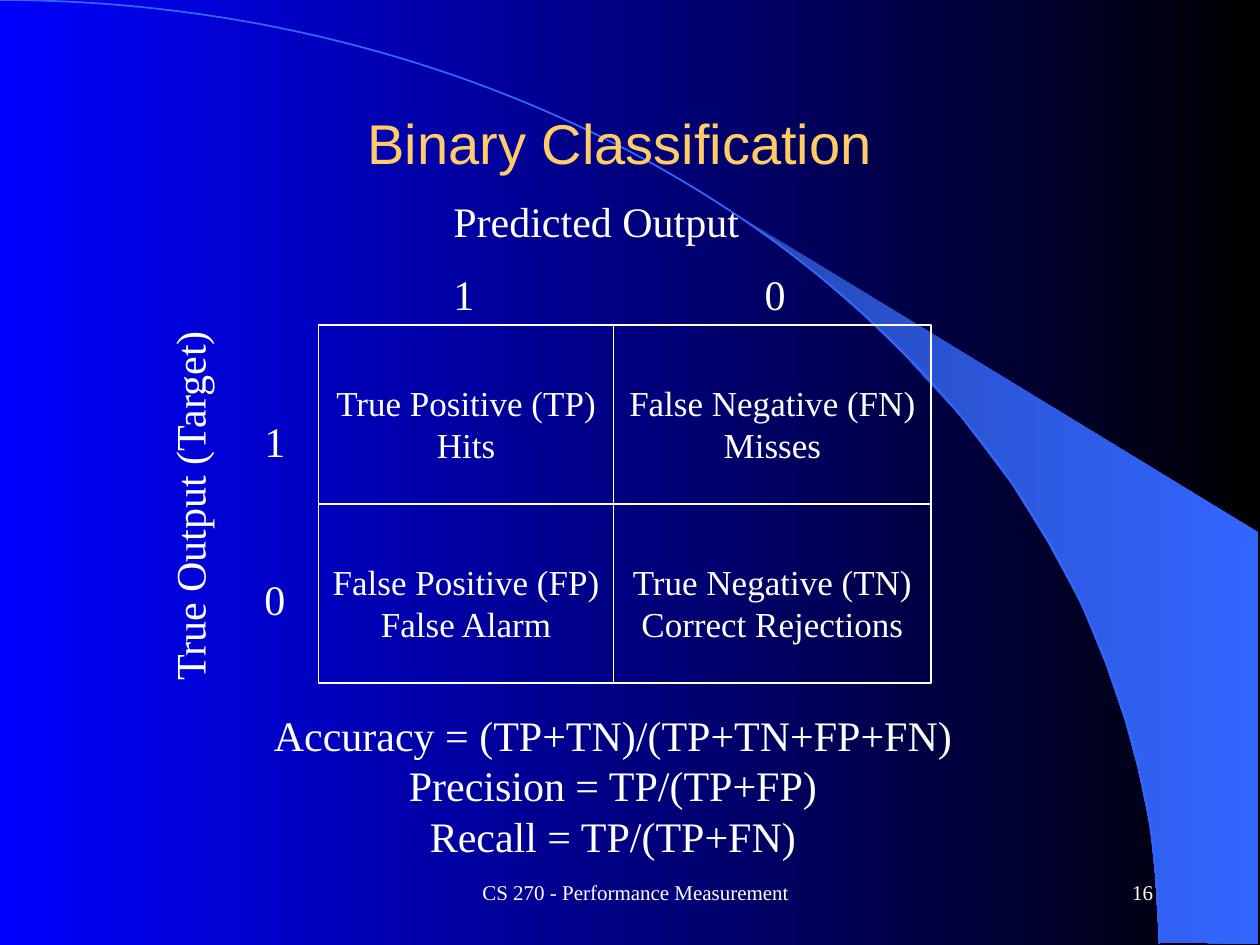
import math

import pptx
import pptx.dml.color
import pptx.enum.shapes
import pptx.enum.text
import pptx.oxml.ns
import pptx.util
from pptx.util import Inches

RGBColor = pptx.dml.color.RGBColor
Align = pptx.enum.text.PP_ALIGN
Anchor = pptx.enum.text.MSO_ANCHOR

WHITE = RGBColor(0xFF, 0xFF, 0xFF)
GOLD = RGBColor(0xFF, 0xCC, 0x66)
BLUE = RGBColor(0x00, 0x00, 0xFF)
BLACK = RGBColor(0x00, 0x00, 0x00)
DEEP_BLUE = RGBColor(0x24, 0x49, 0xB6)
BRIGHT_BLUE = RGBColor(0x33, 0x66, 0xFF)

ARC_WIDTH, ARC_HEIGHT, ARC_STEPS = 9.2, 7.49, 90
BEAM = [
    (9.2, 7.48), (9.99, 7.49), (9.99, 4.23), (5.89, 1.73), (6.24, 1.99),
    (6.53, 2.22), (6.85, 2.5), (7.16, 2.8), (7.62, 3.3), (8.03, 3.84),
    (8.32, 4.31), (8.58, 4.79), (8.78, 5.28), (8.93, 5.72), (9.03, 6.09),
    (9.13, 6.56), (9.17, 6.96),
]

COLUMNS = [(2.53, 2.34), (4.87, 2.52)]
ROW_TOP, ROW_HEIGHT = 2.58, 1.42
OUTCOMES = [
    ["True Positive (TP)\nHits", "False Negative (FN)\nMisses"],
    ["False Positive (FP)\nFalse Alarm", "True Negative (TN)\nCorrect Rejections"],
]
CLASS_LABELS = [
    ("1", 3.5, 2.08), ("0", 5.97, 2.08),
    ("1", 2, 3.25), ("0", 2, 4.5),
]
MEASURES = "\n".join([
    "Accuracy = (TP+TN)/(TP+TN+FP+FN)",
    "Precision = TP/(TP+FP)",
    "Recall = TP/(TP+FN)",
])


def fill_gradient(fill, start, end):
    """Fill from left to right with two colours."""
    fill.gradient()
    fill.gradient_angle = 0
    for stop, color in zip(fill.gradient_stops, (start, end)):
        stop.color.rgb = color


def add_outline(page, points, close):
    """Add a freeform through points given in inches."""
    corners = [(Inches(x), Inches(y)) for x, y in points]
    builder = page.shapes.build_freeform(*corners[0])
    builder.add_line_segments(corners[1:], close=close)
    outline = builder.convert_to_shape()
    outline.shadow.inherit = False
    return outline


def add_backdrop(page):
    """Draw the gradient background with its beam and arc."""
    fill_gradient(page.background.fill, BLUE, BLACK)
    beam = add_outline(page, BEAM, True)
    fill_gradient(beam.fill, DEEP_BLUE, BRIGHT_BLUE)
    beam.line.fill.background()
    angles = [math.pi / 2 * step / ARC_STEPS for step in range(ARC_STEPS + 1)]
    curve = [(ARC_WIDTH * math.sin(angle), ARC_HEIGHT * (1 - math.cos(angle)))
             for angle in angles]
    arc = add_outline(page, curve, False)
    arc.fill.background()
    arc.line.color.rgb = BRIGHT_BLUE
    arc.line.width = pptx.util.Pt(1)


def add_text(page, text, left, top, width, height, size=24, align=Align.LEFT,
             anchor=Anchor.TOP, font="Times New Roman", color=WHITE, wrap=False):
    """Add a text box with one paragraph for each line of text."""
    box = page.shapes.add_textbox(
        Inches(left), Inches(top), Inches(width), Inches(height))
    frame = box.text_frame
    frame.word_wrap = wrap
    frame.vertical_anchor = anchor
    frame.text = text
    for para in frame.paragraphs:
        para.alignment = align
        for span in para.runs:
            span.font.size = pptx.util.Pt(size)
            span.font.name = font
            span.font.color.rgb = color
    return box


def add_cell(page, left, top, width):
    """Add one outlined cell of the matrix."""
    cell = page.shapes.add_shape(
        pptx.enum.shapes.MSO_SHAPE.RECTANGLE,
        Inches(left), Inches(top), Inches(width), Inches(ROW_HEIGHT))
    cell.shadow.inherit = False
    cell.fill.background()
    cell.line.color.rgb = WHITE
    cell.line.width = pptx.util.Pt(0.75)


def add_matrix(page):
    """Add the four outcomes with their class labels."""
    for label, left, top in CLASS_LABELS:
        add_text(page, label, left, top, 0.37, 0.5, wrap=True)
    for row, outcomes in enumerate(OUTCOMES):
        top = ROW_TOP + row * ROW_HEIGHT
        for (left, width), outcome in zip(COLUMNS, outcomes):
            add_text(page, outcome, left, top + 0.4, width, 0.77,
                     size=20, align=Align.CENTER)
            add_cell(page, left, top, width)


def main():
    """Build the slide and save it."""
    deck = pptx.Presentation()
    deck.slide_width, deck.slide_height = Inches(10), Inches(7.5)
    page = deck.slides.add_slide(deck.slide_layouts[6])
    add_backdrop(page)
    add_text(page, "CS 270 - Performance Measurement", 3.17, 6.83, 3.75, 0.5,
             size=12, align=Align.CENTER, anchor=Anchor.MIDDLE, wrap=True)
    add_text(page, "16", 7.17, 6.83, 2.08, 0.5,
             size=12, align=Align.RIGHT, anchor=Anchor.MIDDLE, wrap=True)
    add_text(page, "Binary Classification", 0.67, 0.67, 8.5, 0.92, size=32,
             align=Align.CENTER, anchor=Anchor.MIDDLE, font="Arial",
             color=GOLD, wrap=True)
    add_text(page, "Predicted Output", 3.5, 1.5, 2.47, 0.5)
    target = add_text(page, "True Output (Target)", 0, 3.75, 3, 0.5)
    target.rotation = 270
    add_matrix(page)
    add_text(page, MEASURES, 2.04, 5.58, 5.65, 1.31, align=Align.CENTER)
    deck.save("out.pptx")


if __name__ == "__main__":
    main()
